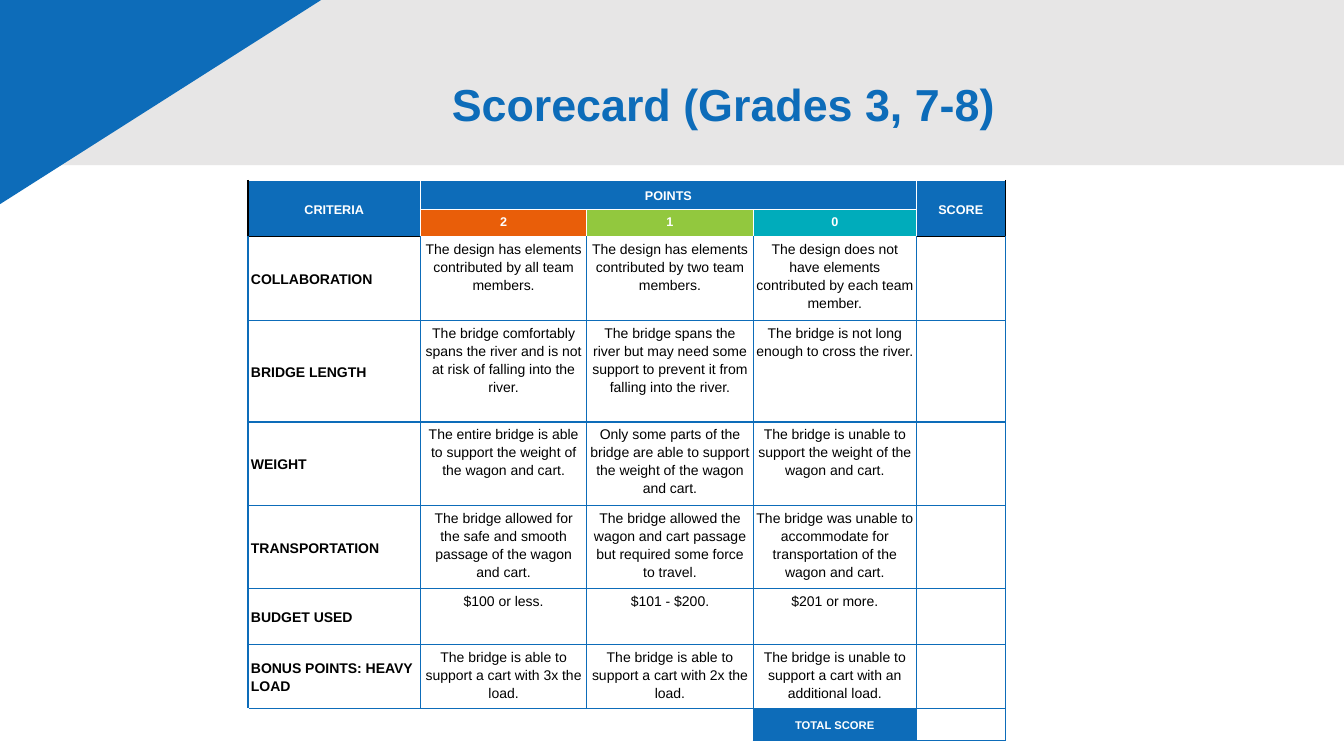
from dataclasses import dataclass
from typing import Optional

from lxml.etree import SubElement
from pptx import Presentation
from pptx.dml.color import RGBColor
from pptx.enum.shapes import MSO_SHAPE as Shape
from pptx.enum.text import MSO_ANCHOR as Anchor, PP_ALIGN as Align
from pptx.oxml.ns import qn
from pptx.util import Emu, Inches, Pt

BLUE = RGBColor(0x0D, 0x6C, 0xB9)
GREY = RGBColor(0xE7, 0xE6, 0xE6)
ORANGE = RGBColor(0xE9, 0x5E, 0x09)
GREEN = RGBColor(0x92, 0xC8, 0x3E)
TEAL = RGBColor(0x00, 0xAC, 0xBB)
WHITE = RGBColor(0xFF, 0xFF, 0xFF)
BLACK = RGBColor(0, 0, 0)
FONT = "Arial"

WIDTH, HEIGHT = Inches(13.33), Inches(7.5)
COLUMNS = (1.71, 1.65, 1.65, 1.62, 0.88)
ROWS = (0.29, 0.27, 0.82, 1.01, 0.82, 0.82, 0.55, 0.63, 0.32)
HEADER_ROWS, TOTAL_ROW, WEIGHT_ROW = 2, len(ROWS) - 1, 4
SCORE_COLUMN, TOTAL_COLUMN = 4, 3
SPANS = (((0, 0), (1, 0)), ((0, 1), (0, 3)), ((0, 4), (1, 4)), ((8, 0), (8, 2)))


@dataclass(frozen=True)
class Box:
    """A frame in percent of the slide's width and height."""
    left: float
    top: float
    width: float
    height: float

    def emu(self) -> tuple[Emu, Emu, Emu, Emu]:
        return (Emu(int(WIDTH * self.left / 100)), Emu(int(HEIGHT * self.top / 100)),
                Emu(int(WIDTH * self.width / 100)), Emu(int(HEIGHT * self.height / 100)))


@dataclass(frozen=True)
class Style:
    size: int
    color: RGBColor
    bold: bool
    align: Align
    anchor: Anchor
    fill: Optional[RGBColor] = None


@dataclass(frozen=True)
class Label:
    """A cell of the header or the total row."""
    row: int
    column: int
    text: str
    style: Style


@dataclass(frozen=True)
class Criterion:
    name: str
    two: str
    one: str
    zero: str


def header(fill: RGBColor, anchor: Anchor = Anchor.MIDDLE, size: int = 9) -> Style:
    return Style(size, WHITE, True, Align.CENTER, anchor, fill)


NAME = Style(10, BLACK, True, Align.LEFT, Anchor.MIDDLE)
DESCRIPTION = Style(10, BLACK, False, Align.CENTER, Anchor.TOP)
EMPTY = Style(8, BLACK, False, Align.LEFT, Anchor.TOP)

LABELS = (
    Label(0, 0, "CRITERIA", header(BLUE)),
    Label(0, 1, "POINTS", header(BLUE)),
    Label(0, SCORE_COLUMN, "SCORE", header(BLUE)),
    Label(1, 1, "2", header(ORANGE, Anchor.TOP)),
    Label(1, 2, "1", header(GREEN, Anchor.TOP)),
    Label(1, 3, "0", header(TEAL, Anchor.TOP)),
    Label(TOTAL_ROW, TOTAL_COLUMN, "TOTAL SCORE", header(BLUE, size=8)),
)

CRITERIA = (
    Criterion("COLLABORATION",
              "The design has elements contributed by all team members.",
              "The design has elements contributed by two team members.",
              "The design does not have elements contributed by each team member."),
    Criterion("BRIDGE LENGTH",
              "The bridge comfortably spans the river and is not at risk of falling into the river.",
              "The bridge spans the river but may need some support to prevent it from falling into the river.",
              "The bridge is not long enough to cross the river."),
    Criterion("WEIGHT",
              "The entire bridge is able to support the weight of the wagon and cart.",
              "Only some parts of the bridge are able to support the weight of the wagon and cart.",
              "The bridge is unable to support the weight of the wagon and cart."),
    Criterion("TRANSPORTATION",
              "The bridge allowed for the safe and smooth passage of the wagon and cart.",
              "The bridge allowed the wagon and cart passage but required some force to travel.",
              "The bridge was unable to accommodate for transportation of the wagon and cart."),
    Criterion("BUDGET USED", "$100 or less.", "$101 - $200.", "$201 or more."),
    Criterion("BONUS POINTS: HEAVY LOAD",
              "The bridge is able to support a cart with 3x the load.",
              "The bridge is able to support a cart with 2x the load.",
              "The bridge is unable to support a cart with an additional load."),
)


def write(p, text: str, style: Style, spacing: float) -> None:
    p.text = text
    p.alignment = style.align
    p.line_spacing = spacing
    p.font.name, p.font.size, p.font.bold = FONT, Pt(style.size), style.bold
    p.font.color.rgb = style.color
    if not text:
        SubElement(p._p, qn("a:endParaRPr"), sz=str(style.size * 100))


def add_block(s, kind: Shape, box: Box, color: RGBColor):
    sp = s.shapes.add_shape(kind, *box.emu())
    sp.shadow.inherit = False
    sp.fill.solid()
    sp.fill.fore_color.rgb = color
    sp.line.fill.background()
    return sp


def add_title(s, text: str, box: Box) -> None:
    tf = s.shapes.add_textbox(*box.emu()).text_frame
    tf.word_wrap = True
    tf.vertical_anchor = Anchor.MIDDLE
    write(tf.paragraphs[0], text, Style(32, BLUE, True, Align.RIGHT, Anchor.MIDDLE), 0.9)


def horizontal_edge(line: int, column: int) -> RGBColor:
    """Colour of the rule above row number `line`."""
    if 0 < line <= HEADER_ROWS and column in (0, SCORE_COLUMN):
        return BLACK
    hidden = line > TOTAL_ROW and column < TOTAL_COLUMN
    return WHITE if line <= HEADER_ROWS or hidden else BLUE


def vertical_edge(row: int, line: int) -> RGBColor:
    """Colour of the rule to the left of column number `line`."""
    if row < HEADER_ROWS:
        return BLACK if line in (0, len(COLUMNS)) else WHITE
    return WHITE if row == TOTAL_ROW and line < TOTAL_COLUMN else BLUE


def add_borders(cell, row: int, column: int) -> None:
    edges = {"a:lnL": vertical_edge(row, column), "a:lnR": vertical_edge(row, column + 1),
             "a:lnT": horizontal_edge(row, column), "a:lnB": horizontal_edge(row + 1, column)}
    for tag, color in edges.items():
        ln = SubElement(cell._tc.get_or_add_tcPr(), qn(tag), w=str(Pt(1)))
        SubElement(SubElement(ln, qn("a:solidFill")), qn("a:srgbClr"), val=str(color))


def fill_cell(cell, text: str, style: Style) -> None:
    cell.margin_left = cell.margin_right = cell.margin_top = cell.margin_bottom = Inches(0.03)
    cell.vertical_anchor = style.anchor
    if style.fill is None:
        cell.fill.background()
    else:
        cell.fill.solid()
        cell.fill.fore_color.rgb = style.fill
    write(cell.text_frame.paragraphs[0], text, style, 1.15)


def add_scorecard(s, left: float, top: float) -> None:
    box = Box(left, top, 56.3, 73.7)
    table = s.shapes.add_table(len(ROWS), len(COLUMNS), *box.emu()).table
    table.first_row = table.horz_banding = False
    for column, width in zip(table.columns, COLUMNS):
        column.width = Inches(width)
    for row, height in zip(table.rows, ROWS):
        row.height = Inches(height)

    content = {(item.row, item.column): (item.text, item.style) for item in LABELS}
    for r, item in enumerate(CRITERIA, HEADER_ROWS):
        content[r, 0] = (item.name, NAME)
        for c, text in enumerate((item.two, item.one, item.zero), 1):
            content[r, c] = (text, DESCRIPTION)
    for r in range(len(ROWS)):
        for c in range(len(COLUMNS)):
            cell = table.cell(r, c)
            add_borders(cell, r, c)
            fill_cell(cell, *content.get((r, c), ("", EMPTY)))
    for c in range(1, SCORE_COLUMN):
        table.cell(WEIGHT_ROW, c).text_frame.paragraphs[0].space_after = Pt(10)
    for first, last in SPANS:
        table.cell(*first).merge(table.cell(*last))


def main() -> None:
    prs = Presentation()
    prs.slide_width, prs.slide_height = WIDTH, HEIGHT
    s = prs.slides.add_slide(prs.slide_layouts[6])
    add_block(s, Shape.RECTANGLE, Box(-1.95, -2.53, 101.95, 24.4), GREY)
    corner = add_block(s, Shape.RIGHT_TRIANGLE, Box(-19.28, -22.93, 63.47, 71.73), BLUE)
    corner.rotation = 180
    corner._element.spPr.find(qn("a:xfrm")).set("flipH", "1")
    add_title(s, "Scorecard (Grades 3, 7-8)", Box(2.03, 4.53, 72.77, 19.33))
    add_scorecard(s, 18.45, 23.87)
    prs.save("out.pptx")


if __name__ == "__main__":
    main()
